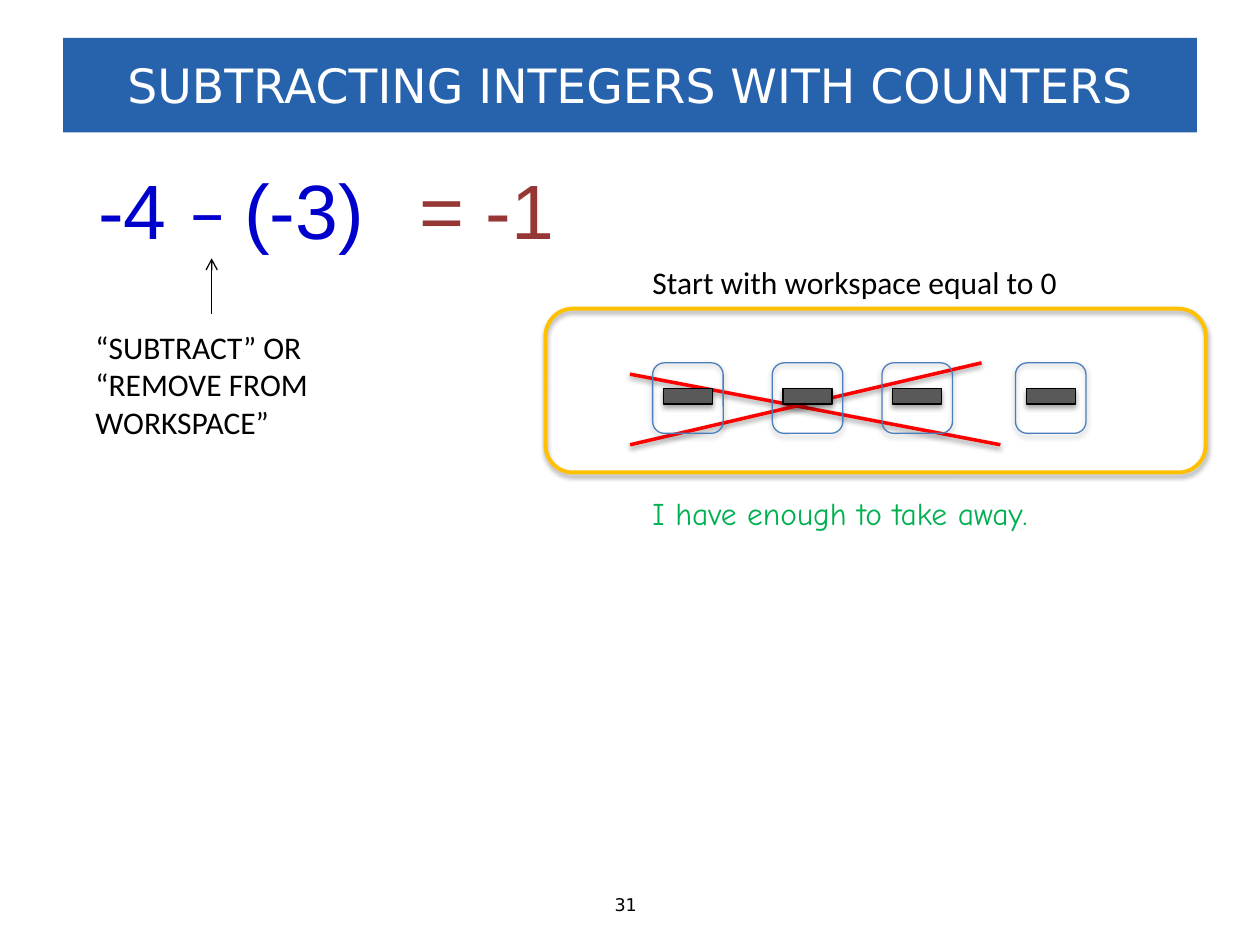
from lxml.etree import SubElement
from pptx import Presentation
from pptx.dml.color import RGBColor
from pptx.enum.shapes import MSO_CONNECTOR as Connector, MSO_SHAPE as Shape
from pptx.enum.text import MSO_ANCHOR as Anchor, MSO_AUTO_SIZE as AutoSize, PP_ALIGN as Align
from pptx.oxml.ns import qn
from pptx.util import Inches, Pt

BLACK = RGBColor(0x00, 0x00, 0x00)
WHITE = RGBColor(0xFF, 0xFF, 0xFF)
BANNER_BLUE = RGBColor(0x27, 0x62, 0xAD)
FORMULA_BLUE = RGBColor(0x00, 0x00, 0xCC)
ANSWER_RED = RGBColor(0x95, 0x37, 0x35)
CROSS_RED = RGBColor(0xFF, 0x00, 0x00)
COUNTER_GRAY = RGBColor(0x59, 0x59, 0x59)
COUNTER_BLUE = RGBColor(0x4B, 0x7E, 0xBC)
WORKSPACE_GOLD = RGBColor(0xFF, 0xC0, 0x00)
COMMENT_GREEN = RGBColor(0x00, 0xB0, 0x50)

# Grid of square cells, ten to the inch
COLUMNS, ROWS = 100, 75
CELL = Inches(0.1)


def cells(*counts):
    return [round(count * CELL) for count in counts]


class CounterSlide:
    body_font, math_font, banner_font = "Calibri", "Arial", "DejaVu Sans"
    body_size, math_size = 18, 44

    def __init__(self, deck):
        self.slide = deck.slides.add_slide(deck.slide_layouts[5])
        self.shapes = self.slide.shapes

    def style(self, font, name, size, color):
        font.name, font.size = name, Pt(size)
        font.color.rgb = color

    def shadow(self, properties, opacity, distance):
        effects = properties.find(qn("a:effectLst"))
        if effects is None:
            effects = SubElement(properties, qn("a:effectLst"))
        outer = SubElement(effects, qn("a:outerShdw"), blurRad=str(Pt(3.1)),
                           dist=str(Pt(distance)), dir="5400000", rotWithShape="0")
        color = SubElement(outer, qn("a:srgbClr"), val=str(BLACK))
        SubElement(color, qn("a:alpha"), val=str(opacity * 1000))

    def title(self, text, *place):
        title = self.shapes.title
        title.left, title.top, title.width, title.height = cells(*place)
        title.fill.solid()
        title.fill.fore_color.rgb = BANNER_BLUE
        title.text_frame.text = text
        title.text_frame.vertical_anchor = Anchor.MIDDLE
        heading = title.text_frame.paragraphs[0]
        heading.alignment = Align.CENTER
        self.style(heading.font, self.banner_font, 27, WHITE)

    def text(self, lines, *place, font=body_font, size=body_size, color=BLACK, wrap=True):
        frame = self.shapes.add_textbox(*cells(*place)).text_frame
        frame.word_wrap = wrap
        frame.auto_size = AutoSize.SHAPE_TO_FIT_TEXT
        frame.text = lines
        for paragraph in frame.paragraphs:
            self.style(paragraph.font, font, size, color)
        return frame

    def formula(self, parts, *place, indent):
        frame = self.text("", *place)
        frame.margin_left = Inches(indent)
        for part, font in parts:
            run = frame.paragraphs[0].add_run()
            run.text = part
            self.style(run.font, font, self.math_size, FORMULA_BLUE)

    def shape(self, kind, *place, line, weight=0.75, fill=None):
        shape = self.shapes.add_shape(kind, *cells(*place))
        if fill is None:
            shape.fill.background()
        else:
            shape.fill.solid()
            shape.fill.fore_color.rgb = fill
        shape.line.color.rgb = line
        shape.line.width = Pt(weight)
        shape.shadow.inherit = False
        self.shadow(shape._element.spPr, 35, 1.8)

    def counter(self, left, top):
        self.shape(Shape.MATH_MINUS, left + 0.15, top, 5.3, 5.3, line=BLACK, fill=COUNTER_GRAY)
        self.shape(Shape.ROUNDED_RECTANGLE, left, top, 5.6, 5.6, line=COUNTER_BLUE)

    def line(self, *ends, color, weight):
        line = self.shapes.add_connector(Connector.STRAIGHT, *cells(*ends))
        line.line.color.rgb = color
        line.line.width = Pt(weight)
        return line._element.spPr

    def arrow(self, *ends):
        properties = self.line(*ends, color=BLACK, weight=0.75)
        SubElement(properties.find(qn("a:ln")), qn("a:tailEnd"), type="arrow")
        SubElement(properties, qn("a:effectLst"))

    def cross_stroke(self, *ends):
        self.shadow(self.line(*ends, color=CROSS_RED, weight=2), 38, 1.6)


def main():
    deck = Presentation()
    deck.slide_width, deck.slide_height = cells(COLUMNS, ROWS)
    page = CounterSlide(deck)

    # Banner and page number
    page.title("SUBTRACTING INTEGERS WITH COUNTERS", 5, 3, 90, 7.5)
    page.text("31", 47.8, 70.5, 4.4, 2.7, font=page.banner_font, size=10, wrap=False)

    # Meaning of the minus sign
    page.text("Start with workspace equal to 0", 50.8, 20.4, 35.3, 4)
    page.arrow(16.8, 24.9, 16.8, 20.5)
    page.text("“SUBTRACT” OR\n“REMOVE FROM\nWORKSPACE”", 6.6, 25.5, 20.3, 10.1)

    # Cross over the three counters taken away
    page.cross_stroke(50, 29.7, 79.4, 35.3)
    page.cross_stroke(50, 35.3, 77.9, 28.8)

    # Negative counters
    for left in (80.6, 70, 61.3, 51.8):
        page.counter(left, 28.8)

    # Equation
    page.formula([("-4 ", page.math_font), ("– ", page.body_font), ("(-3)", page.math_font)],
                 6.2, 12.4, 26.1, 8.4, indent=0.16)
    page.text("= -1", 32.3, 12.4, 13, 8.4,
              font=page.math_font, size=page.math_size, color=ANSWER_RED)

    # Workspace and comment
    page.shape(Shape.ROUNDED_RECTANGLE, 43.3, 24.5, 52.4, 13, line=WORKSPACE_GOLD, weight=2.25)
    page.text("I have enough to take away.", 50.8, 38.7, 35.3, 4,
              font="Comic Neue", color=COMMENT_GREEN)

    deck.save("out.pptx")


if __name__ == "__main__":
    main()
